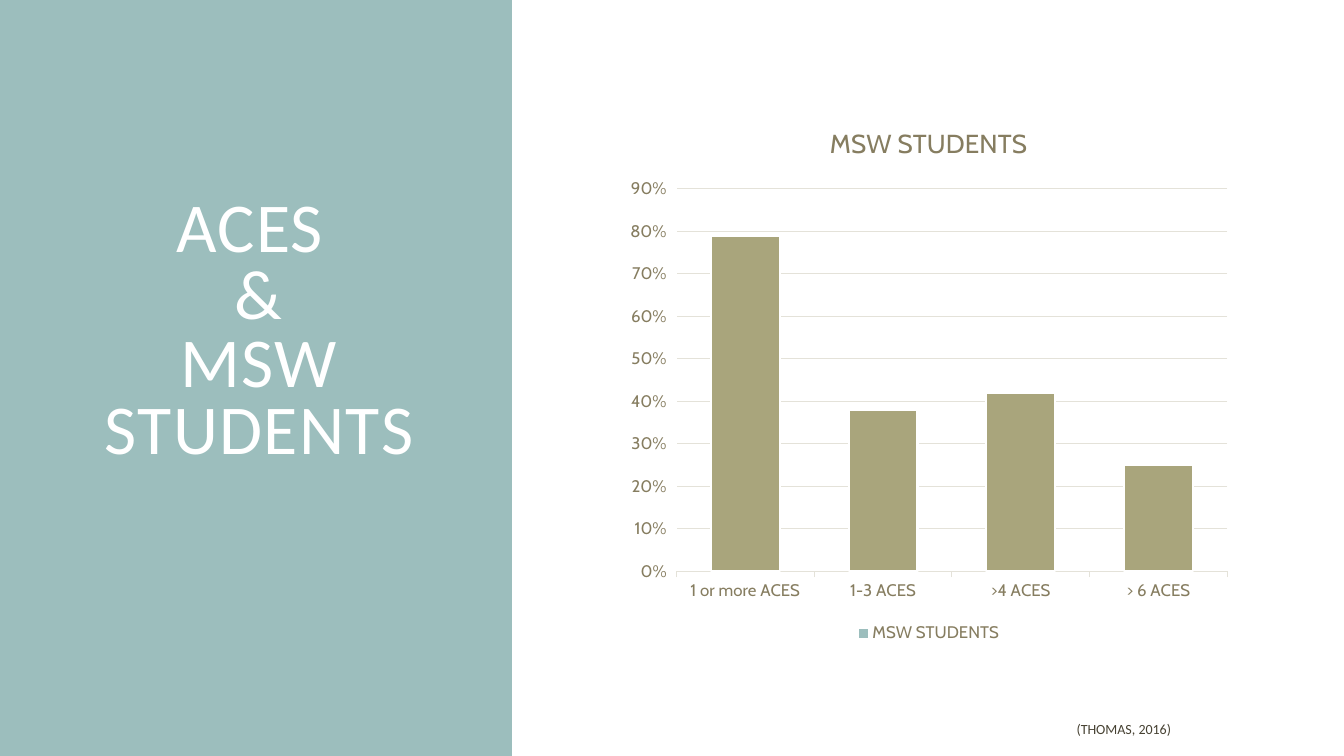
from pptx import Presentation
from pptx.chart.data import CategoryChartData
from pptx.dml.color import RGBColor
from pptx.enum.chart import XL_CHART_TYPE, XL_LEGEND_POSITION, XL_TICK_MARK
from pptx.enum.shapes import MSO_SHAPE
from pptx.enum.text import MSO_ANCHOR, PP_ALIGN
from pptx.util import Cm, Pt

TEAL = RGBColor(0x9C, 0xBE, 0xBD)
OLIVE = RGBColor(0xA9, 0xA5, 0x7C)
TAUPE = RGBColor(0x86, 0x7D, 0x60)
GRID = RGBColor(0xE4, 0xE2, 0xD9)
DARK = RGBColor(0x47, 0x42, 0x33)
WHITE = RGBColor(0xFF, 0xFF, 0xFF)


def style_font(font, name, size, color):
    font.name = name
    font.size = Pt(size)
    font.color.rgb = color
    font.bold = False


def add_text(left, top, width, height, text, size, color, align):
    box = slide.shapes.add_textbox(Cm(left), Cm(top), Cm(width), Cm(height))
    frame = box.text_frame
    frame.word_wrap = True
    frame.vertical_anchor = MSO_ANCHOR.MIDDLE
    paragraph = frame.paragraphs[0]
    paragraph.text = text
    paragraph.alignment = align
    style_font(paragraph.font, "Calibri", size, color)
    return frame


prs = Presentation()
prs.slide_width = Cm(33.87)
prs.slide_height = Cm(19.05)
slide = prs.slides.add_slide(prs.slide_layouts[6])

panel = slide.shapes.add_shape(MSO_SHAPE.RECTANGLE, 0, 0, Cm(12.9), prs.slide_height)
panel.shadow.inherit = False
panel.fill.solid()
panel.fill.fore_color.rgb = TEAL
panel.line.fill.background()

heading = add_text(1.78, 1.78, 9.5, 15.47, "ACES \v&\vMSW STUDENTS", 50, WHITE, PP_ALIGN.CENTER)
heading.margin_bottom = Cm(2.35)
heading.paragraphs[0].line_spacing = 0.8
for run in heading.paragraphs[0].runs:
    run.font._element.set("spc", "100")

students = CategoryChartData(number_format="0%")
students.categories = ["1 or more ACES", "1-3 ACES", ">4 ACES", "> 6 ACES"]
students.add_series("MSW STUDENTS", [0.79, 0.38, 0.42, 0.25])
chart = slide.shapes.add_chart(
    XL_CHART_TYPE.COLUMN_CLUSTERED, Cm(15.57), Cm(2.64), Cm(15.67), Cm(13.67), students
).chart
style_font(chart.font, "Cabin", 10, DARK)

chart.has_title = True
chart_title = chart.chart_title.text_frame.paragraphs[0]
chart_title.text = "MSW STUDENTS"
style_font(chart_title.font, "Cabin", 18.6, TAUPE)

chart.has_legend = True
chart.legend.position = XL_LEGEND_POSITION.BOTTOM
chart.legend.include_in_layout = False
style_font(chart.legend.font, "Cabin", 12, TAUPE)

for axis in (chart.category_axis, chart.value_axis):
    axis.major_tick_mark = XL_TICK_MARK.OUTSIDE
    style_font(axis.tick_labels.font, "Cabin", 12, TAUPE)

percent_axis = chart.value_axis
percent_axis.minimum_scale = 0
percent_axis.maximum_scale = 0.9
percent_axis.major_unit = 0.1
percent_axis.tick_labels.number_format = "0%"
percent_axis.tick_labels.number_format_is_linked = False
percent_axis.format.line.fill.background()
for line in (chart.category_axis.format.line, percent_axis.major_gridlines.format.line):
    line.color.rgb = GRID
    line.width = Pt(0.75)

plot = chart.plots[0]
plot.gap_width = 100
plot.vary_by_categories = False
bars = plot.series[0]
bar_formats = [bars.points[i].format for i in range(len(bars.values))]
for bar_format, color in [(bars.format, TEAL)] + [(f, OLIVE) for f in bar_formats]:
    bar_format.fill.solid()
    bar_format.fill.fore_color.rgb = color
    bar_format.line.color.rgb = WHITE
    bar_format.line.width = Pt(1.5)

add_text(13.46, 17.98, 16.38, 0.76, "(THOMAS, 2016) ", 10, DARK, PP_ALIGN.RIGHT)

prs.save("out.pptx")
